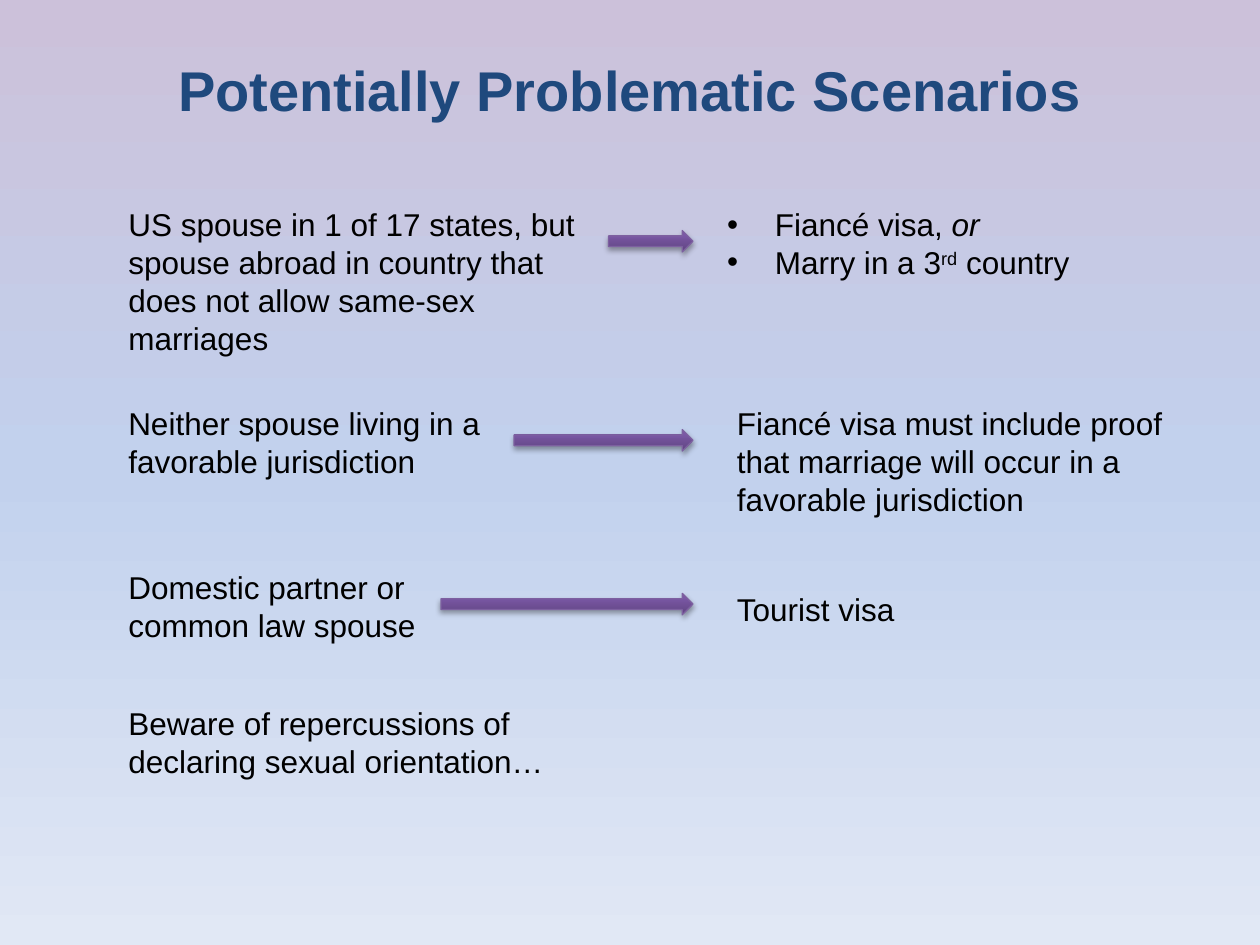
"""Build the slide that pairs problematic visa scenarios with their remedies."""
from copy import deepcopy
from dataclasses import dataclass
from typing import Any, NamedTuple, Optional

from lxml.etree import SubElement
from pptx import Presentation
from pptx.dml.color import RGBColor
from pptx.enum.shapes import MSO_SHAPE as Preset
from pptx.enum.text import MSO_ANCHOR as Anchor, MSO_AUTO_SIZE as AutoSize, PP_ALIGN as Align
from pptx.oxml import parse_xml
from pptx.oxml.ns import nsdecls, qn
from pptx.util import Inches, Pt

Gradient = tuple[tuple[float, str], ...]


@dataclass(frozen=True)
class Theme:
    font: str = "Arial"
    title_size: int = 32
    body_size: int = 18
    title_color: str = "1F497D"
    body_color: str = "000000"
    arrow_line: str = "7D60A0"
    arrow_fill: Gradient = ((0, "5F4480"), (0.8, "7B58A6"), (1, "7C57A8"))
    background: Gradient = ((0, "CCC1DA"), (0.5, "C2D1ED"), (1, "E1E8F5"))


class Run(NamedTuple):
    text: str
    italic: bool = False
    superscript: bool = False


class Remedy(NamedTuple):
    text: str
    top: float


class Scenario(NamedTuple):
    text: str
    top: float
    width: float
    height: float = 0.71
    arrow_left: Optional[float] = None
    remedy: Optional[Remedy] = None


THEME = Theme()
SCENARIO_LEFT, REMEDY_LEFT, REMEDY_WIDTH = 0.92, 5.75, 3.58
ARROW_RIGHT, ARROW_HEIGHT, ARROW_DROP = 5.5, 0.17, 0.25
BULLET_INDENT = 0.38

SCENARIOS = (
    Scenario("US spouse in 1 of 17 states, but spouse abroad in country that "
             "does not allow same-sex marriages", 1.58, 3.75, 1.31, 4.83),
    Scenario("Neither spouse living in a favorable jurisdiction", 3.16, 4, arrow_left=4.08,
             remedy=Remedy("Fiancé visa must include proof that marriage will occur "
                           "in a favorable jurisdiction", 3.16)),
    Scenario("Domestic partner or common law spouse", 4.46, 3.25, arrow_left=3.5,
             remedy=Remedy("Tourist visa", 4.63)),
    Scenario("Beware of repercussions of declaring sexual orientation…", 5.54, 3.75),
)
VISA_OPTIONS = (
    (Run("Fiancé visa, "), Run("or", italic=True)),
    (Run("Marry in a 3"), Run("rd", superscript=True), Run(" country")),
)


def place(shape: Any, left: float, top: float, width: float, height: float) -> None:
    """Move and size a shape, in inches."""
    shape.left, shape.top = Inches(left), Inches(top)
    shape.width, shape.height = Inches(width), Inches(height)


def style(paragraph: Any, size: int, color: str) -> None:
    """Apply the theme font to a paragraph."""
    paragraph.font.name = THEME.font
    paragraph.font.size = Pt(size)
    paragraph.font.color.rgb = RGBColor.from_string(color)


def apply_gradient(fill: Any, owner: Any, stops: Gradient, angle: float) -> None:
    """Give a fill a linear gradient with any number of stops."""
    fill.gradient()
    fill.gradient_angle = angle
    stop_list = owner.find(f".//{qn('a:gsLst')}")
    for _ in stops[2:]:
        stop_list.append(deepcopy(stop_list[-1]))
    for stop, (position, color) in zip(fill.gradient_stops, stops):
        stop.position = position
        stop.color.rgb = RGBColor.from_string(color)


def add_title(slide: Any, text: str) -> None:
    """Fill the title placeholder."""
    title = slide.shapes.title
    place(title, 0.5, 0.08, 9, 1.25)
    title.text_frame.vertical_anchor = Anchor.MIDDLE
    title.text_frame.text = text
    paragraph = title.text_frame.paragraphs[0]
    paragraph.alignment = Align.CENTER
    style(paragraph, THEME.title_size, THEME.title_color)
    paragraph.font.bold = True


def add_text(slide: Any, text: str, left: float, top: float, width: float, height: float) -> None:
    """Add a wrapped text box."""
    box = slide.shapes.add_textbox(Inches(left), Inches(top), Inches(width), Inches(height))
    frame = box.text_frame
    frame.word_wrap = True
    frame.auto_size = AutoSize.SHAPE_TO_FIT_TEXT
    frame.text = text
    style(frame.paragraphs[0], THEME.body_size, THEME.body_color)


def add_visa_options(slide: Any) -> None:
    """Fill the body placeholder with the bulleted visa options."""
    body = slide.placeholders[1]
    place(body, 5.67, 1.58, 3.5, 0.71)
    frame = body.text_frame
    frame.auto_size = AutoSize.SHAPE_TO_FIT_TEXT
    for index, option in enumerate(VISA_OPTIONS):
        paragraph = frame.add_paragraph() if index else frame.paragraphs[0]
        paragraph.space_before = Pt(0)
        properties = paragraph._p.get_or_add_pPr()
        properties.set("marL", str(Inches(BULLET_INDENT)))
        properties.set("indent", str(-Inches(BULLET_INDENT)))
        SubElement(properties, qn("a:buFont"), typeface=THEME.font)
        SubElement(properties, qn("a:buChar"), char="•")
        style(paragraph, THEME.body_size, THEME.body_color)
        for part in option:
            run = paragraph.add_run()
            run.text = part.text
            if part.italic:
                run.font.italic = True
            if part.superscript:
                run._r.get_or_add_rPr().set("baseline", "30000")


def add_arrow(slide: Any, left: float, top: float) -> None:
    """Add a shaded block arrow that ends at the shared right edge."""
    arrow = slide.shapes.add_shape(Preset.RIGHT_ARROW, Inches(left), Inches(top),
                                   Inches(ARROW_RIGHT - left), Inches(ARROW_HEIGHT))
    properties = arrow._element.spPr
    apply_gradient(arrow.fill, properties, THEME.arrow_fill, 90)
    arrow.line.color.rgb = RGBColor.from_string(THEME.arrow_line)
    arrow.line.width = Pt(0.75)
    properties.append(parse_xml(
        f'<a:effectLst {nsdecls("a")}><a:outerShdw blurRad="{Pt(3.1)}" dist="{Pt(1.8)}" '
        'dir="5400000" rotWithShape="0"><a:srgbClr val="000000"><a:alpha val="35000"/>'
        '</a:srgbClr></a:outerShdw></a:effectLst>'))


def add_scenario(slide: Any, scenario: Scenario) -> None:
    """Add a scenario with its arrow and remedy, where it has them."""
    add_text(slide, scenario.text, SCENARIO_LEFT, scenario.top, scenario.width, scenario.height)
    if scenario.remedy:
        height = 1.01 if scenario.remedy.top == scenario.top else 0.4
        add_text(slide, scenario.remedy.text, REMEDY_LEFT, scenario.remedy.top,
                 REMEDY_WIDTH, height)
    if scenario.arrow_left is not None:
        add_arrow(slide, scenario.arrow_left, scenario.top + ARROW_DROP)


def main() -> None:
    """Build and save the presentation."""
    deck = Presentation()
    deck.slide_width, deck.slide_height = Inches(10), Inches(7.5)
    slide = deck.slides.add_slide(deck.slide_layouts[1])
    apply_gradient(slide.background.fill, slide._element, THEME.background, 270)
    add_title(slide, "Potentially Problematic Scenarios")
    add_visa_options(slide)
    for scenario in SCENARIOS:
        add_scenario(slide, scenario)
    deck.save("out.pptx")


if __name__ == "__main__":
    main()
